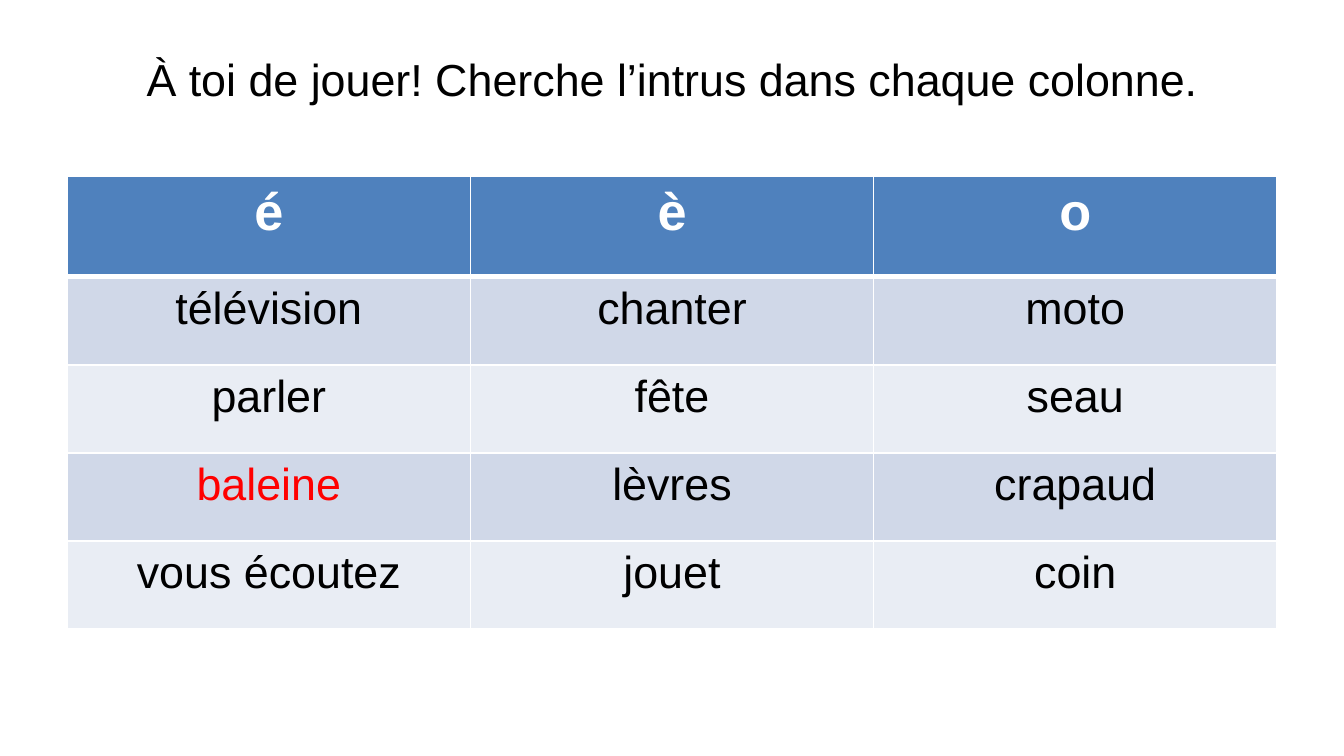
"""Build a French sound-sorting slide with a three-column word table."""
from dataclasses import dataclass

from lxml.etree import SubElement
from pptx import Presentation
from pptx.dml.color import RGBColor as RGB
from pptx.enum.text import MSO_ANCHOR as Anchor, PP_ALIGN as Align
from pptx.oxml.ns import qn
from pptx.util import Inches, Pt


@dataclass(frozen=True)
class Theme:
    font: str = "Arial"
    text: str = "000000"
    header_text: str = "FFFFFF"
    odd_one_out: str = "FF0000"
    header_fill: str = "4F81BD"
    bands: tuple = ("D0D8E8", "E9EDF4")
    border: str = "FFFFFF"
    thin: int = 1
    thick: int = 3
    body_size: int = 24
    header_size: int = 28


THEME = Theme()


def style_text(paragraph, size, color, bold=False):
    paragraph.alignment = Align.CENTER
    paragraph.font.name = THEME.font
    paragraph.font.size = Pt(size)
    paragraph.font.bold = bold
    paragraph.font.color.rgb = RGB.from_string(color)


def add_border(cell, side, width):
    line = SubElement(cell._tc.get_or_add_tcPr(), qn(f"a:ln{side}"), w=str(Pt(width)))
    fill = SubElement(line, qn("a:solidFill"))
    SubElement(fill, qn("a:srgbClr"), val=THEME.border)


words = [
    ["é", "è", "o"],
    ["télévision", "chanter", "moto"],
    ["parler", "fête", "seau"],
    ["baleine", "lèvres", "crapaud"],
    ["vous écoutez", "jouet", "coin"],
]
revealed = "baleine"

prs = Presentation()
prs.slide_width = Inches(10)
prs.slide_height = prs.slide_width * 9 // 16
slide = prs.slides.add_slide(prs.slide_layouts[5])

title = slide.shapes.title
title.left, title.top = Inches(0.5), Inches(0.23)
title.width, title.height = Inches(9), Inches(0.71)
title.text_frame.text = "À toi de jouer! Cherche l’intrus dans chaque colonne."
title.text_frame.vertical_anchor = Anchor.MIDDLE
style_text(title.text_frame.paragraphs[0], THEME.body_size, THEME.text)

table_height = Inches(3.37)
header_height = Inches(0.75)
row_height = (table_height - header_height) // (len(words) - 1)
word_table = slide.shapes.add_table(
    len(words), len(words[0]), Inches(0.5), Inches(1.31), Inches(9), table_height
).table
for column in word_table.columns:
    column.width = Inches(3)

for r, row_words in enumerate(words):
    is_header = r == 0
    word_table.rows[r].height = header_height if is_header else row_height
    fill_color = THEME.header_fill if is_header else THEME.bands[(r - 1) % 2]
    for c, word in enumerate(row_words):
        cell = word_table.cell(r, c)
        cell.text = word
        paragraph = cell.text_frame.paragraphs[0]
        if is_header:
            style_text(paragraph, THEME.header_size, THEME.header_text, bold=True)
        else:
            color = THEME.odd_one_out if word == revealed else THEME.text
            style_text(paragraph, THEME.body_size, color)
        for side in "LRTB":
            under_header = (r, side) in [(0, "B"), (1, "T")]
            add_border(cell, side, THEME.thick if under_header else THEME.thin)
        cell.fill.solid()
        cell.fill.fore_color.rgb = RGB.from_string(fill_color)

prs.save("out.pptx")
